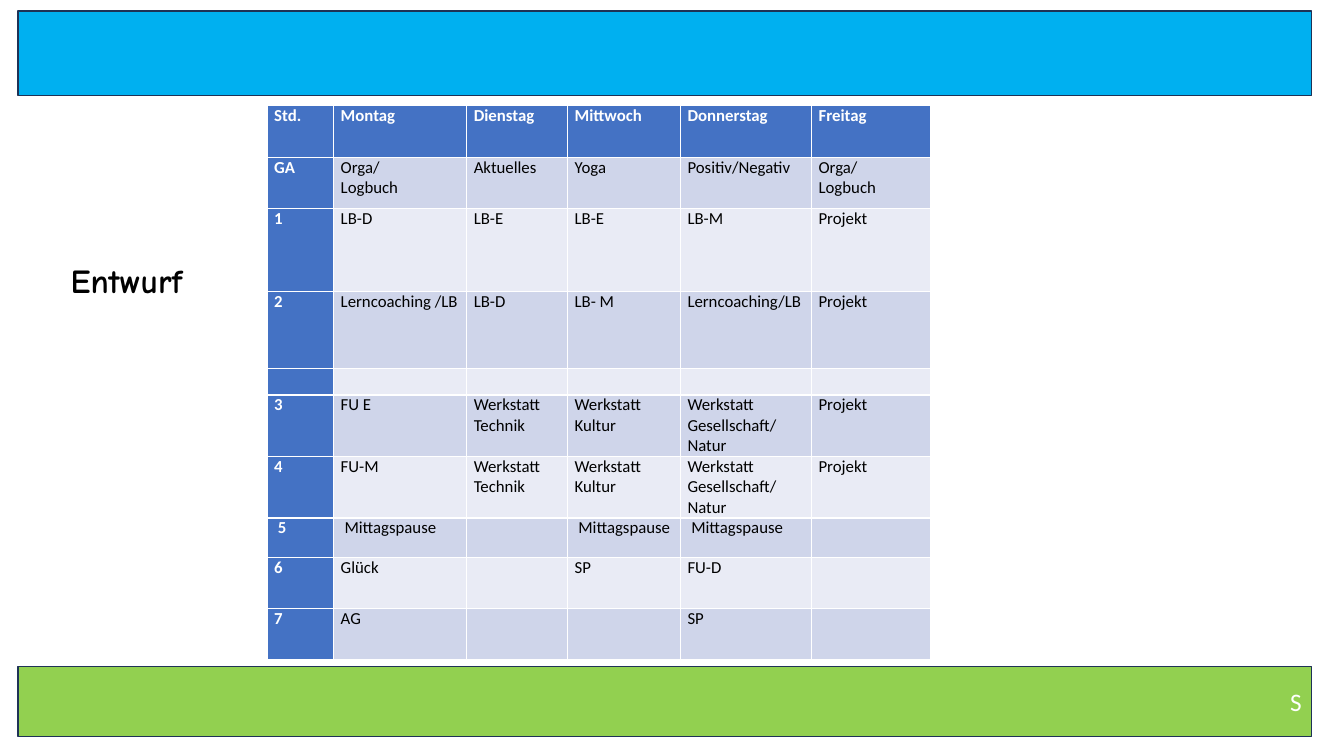
from pptx import Presentation
from pptx import util as u
from pptx.dml.color import RGBColor
from pptx.enum import shapes, text

COLORS = {
    "sky": "00B0F0", "green": "92D050", "edge": "1E3256", "head": "4472C4",
    "dark": "CFD5EA", "light": "E9EBF5", "white": "FFFFFF", "black": "000000",
}
WIDTHS = [0.66, 1.32, 1, 1.12, 1.3, 1.18]
HEIGHTS = [0.51, 0.51, 0.82, 0.77, 0.26, 0.6, 0.6, 0.39, 0.51, 0.51]
PLAN = [
    ["Std.", "Montag", "Dienstag", "Mittwoch", "Donnerstag", "Freitag"],
    ["GA", "Orga/\nLogbuch", "Aktuelles", "Yoga", "Positiv/Negativ", "Orga/\nLogbuch"],
    ["1", "LB-D", "LB-E", "LB-E", "LB-M", "Projekt"],
    ["2", "Lerncoaching /LB", "LB-D", "LB- M", "Lerncoaching/LB", "Projekt"],
    ["", "", "", "", "", ""],
    ["3", "FU E", "Werkstatt\nTechnik", "Werkstatt Kultur",
     "Werkstatt Gesellschaft/\nNatur", "Projekt"],
    ["4", "FU-M", "Werkstatt\nTechnik", "Werkstatt Kultur",
     "Werkstatt Gesellschaft/\nNatur", "Projekt"],
    [" 5", " Mittagspause", "", " Mittagspause", " Mittagspause", ""],
    ["6", "Glück", "", "SP", "FU-D", ""],
    ["7", "AG", "", "", "SP", ""],
]


def style(para, size, name, color, bold=False):
    font = para.font
    font.size, font.name, font.bold = u.Pt(size), name, bold
    font.color.rgb = RGBColor.from_string(COLORS[color])


def add_bar(top, height, color):
    bar = slide.shapes.add_shape(
        shapes.MSO_SHAPE.RECTANGLE,
        u.Inches(0.18), u.Inches(top), u.Inches(12.83), u.Inches(height))
    bar.shadow.inherit = False
    bar.fill.solid()
    bar.fill.fore_color.rgb = RGBColor.from_string(COLORS[color])
    bar.line.color.rgb = RGBColor.from_string(COLORS["edge"])
    bar.line.width = u.Pt(1)
    return bar


deck = Presentation()
deck.slide_width, deck.slide_height = u.Inches(13.33), u.Inches(7.5)
slide = deck.slides.add_slide(deck.slide_layouts[5])

# Bars at the top and bottom
add_bar(0.11, 0.84, "sky")
foot = add_bar(6.61, 0.7, "green")
foot.text_frame.text = "S"
para = foot.text_frame.paragraphs[0]
para.alignment = text.PP_ALIGN.RIGHT
style(para, 18, "Calibri", "white")

# Title
title = slide.shapes.title
title.left, title.top = u.Inches(0.6), u.Inches(2.53)
title.width, title.height = u.Inches(1.52), u.Inches(0.81)
frame = title.text_frame
frame.text = "Entwurf"
frame.auto_size = text.MSO_AUTO_SIZE.NONE
frame.vertical_anchor = text.MSO_ANCHOR.TOP
frame.paragraphs[0].alignment = text.PP_ALIGN.LEFT
style(frame.paragraphs[0], 24, "Comic Neue", "black", True)

# Timetable
table = slide.shapes.add_table(
    len(PLAN), len(WIDTHS), u.Inches(2.65), u.Inches(1.05),
    u.Inches(sum(WIDTHS)), u.Inches(sum(HEIGHTS))).table
table.first_col = True
for col, width in zip(table.columns, WIDTHS):
    col.width = u.Inches(width)
for row, height in zip(table.rows, HEIGHTS):
    row.height = u.Inches(height)

for r, words in enumerate(PLAN):
    for c, word in enumerate(words):
        cell = table.cell(r, c)
        head = r == 0 or c == 0
        band = "dark" if r % 2 else "light"
        cell.fill.solid()
        cell.fill.fore_color.rgb = RGBColor.from_string(COLORS["head" if head else band])
        cell.margin_left = cell.margin_right = u.Inches(0.07)
        cell.margin_top = cell.margin_bottom = 0
        cell.text = word
        for para in cell.text_frame.paragraphs:
            style(para, 12, "Calibri", "white" if head else "black", head)
            if not word:
                # An empty cell takes its line height from the end mark
                para._p.get_or_add_endParaRPr().set("sz", "1200")

deck.save("out.pptx")
